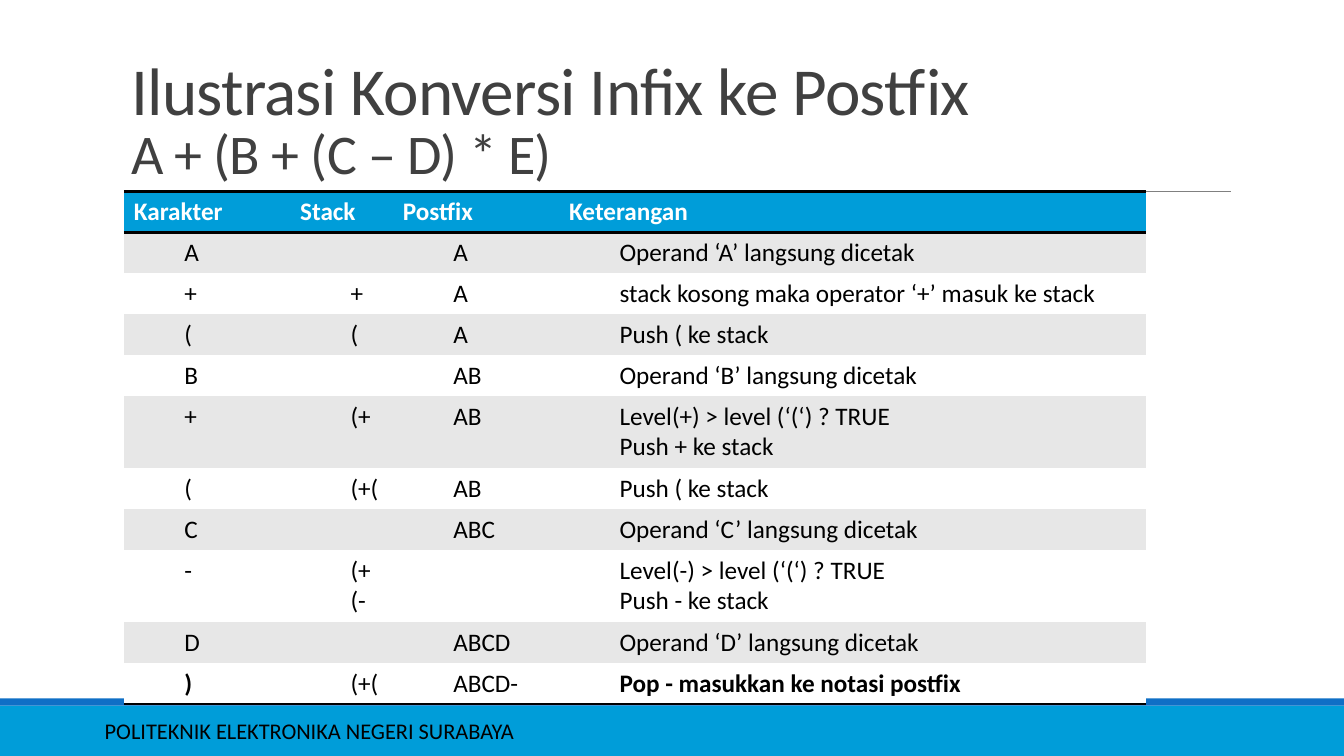
from dataclasses import dataclass

import pptx
import pptx.dml.color
import pptx.enum.shapes
import pptx.enum.text
import pptx.oxml
import pptx.oxml.ns
import pptx.util
from pptx.util import Cm

TITLE = [("Ilustrasi Konversi Infix ke Postfix", 48), ("A + (B + (C – D) * E)", 40)]
FOOTER = "POLITEKNIK ELEKTRONIKA NEGERI SURABAYA"
HEADINGS = ("Karakter", "Stack", "Postfix", "Keterangan")
STEPS = [
    ("A", "", "A", "Operand ‘A’ langsung dicetak"),
    ("+", "+", "A", "stack kosong maka operator ‘+’ masuk ke stack"),
    ("(", "(", "A", "Push ( ke stack"),
    ("B", "", "AB", "Operand ‘B’ langsung dicetak"),
    ("+", "(+", "AB", "Level(+) > level (‘(‘) ? TRUE\nPush + ke stack"),
    ("(", "(+(", "AB", "Push ( ke stack"),
    ("C", "", "ABC", "Operand ‘C’ langsung dicetak"),
    ("-", "(+(-", "", "Level(-) > level (‘(‘) ? TRUE\nPush - ke stack"),
    ("D", "", "ABCD", "Operand ‘D’ langsung dicetak"),
    (")", "(+(", "ABCD-", "Pop - masukkan ke notasi postfix"),
]
BOLD_CELLS = {(10, 0), (10, 3)}
COLUMN_WIDTHS = (4.19, 2.59, 4.19, 14.79)
ROW_HEIGHT, TALL_ROW_HEIGHT = 1.03, 1.82


@dataclass(frozen=True)
class Theme:
    font: str = "Calibri"
    accent: str = "009DD9"
    stripe: str = "0F6FC6"
    rule: str = "808080"
    title: str = "404040"
    ink: str = "000000"
    paper: str = "FFFFFF"
    band: str = "E7E7E7"
    footer_size: int = 16
    table_size: int = 18


THEME = Theme()


def rgb(color):
    return pptx.dml.color.RGBColor.from_string(color)


def write(paragraph, text, *, size, color=THEME.ink, bold=False, spacing=None, indent=None):
    if indent is not None:
        paragraph.level = 1
        properties = paragraph._p.get_or_add_pPr()
        properties.set("marL", str(indent))
        properties.set("indent", "0")
    run = paragraph.add_run()
    run.text = text
    run.font.name = THEME.font
    run.font.size = pptx.util.Pt(size)
    run.font.bold = bold
    run.font.color.rgb = rgb(color)
    if spacing is not None:
        run._r.get_or_add_rPr().set("spc", str(spacing))


def add_bar(slide, top, height, color):
    bar = slide.shapes.add_shape(
        pptx.enum.shapes.MSO_SHAPE.RECTANGLE, 0, Cm(top), Cm(33.87), Cm(height))
    bar.shadow.inherit = False
    bar.fill.solid()
    bar.fill.fore_color.rgb = rgb(color)
    bar.line.fill.background()


def add_border(cell, side):
    border = pptx.oxml.parse_xml(
        f'<a:{side} {pptx.oxml.ns.nsdecls("a")} w="25400"><a:solidFill>'
        f'<a:srgbClr val="{THEME.ink}"/></a:solidFill></a:{side}>')
    properties = cell._tc.get_or_add_tcPr()
    properties.insert(len(properties.findall(pptx.oxml.ns.qn("a:lnT"))), border)


def add_frame(slide):
    add_bar(slide, 17.78, 1.27, THEME.accent)
    add_bar(slide, 17.6, 0.18, THEME.stripe)
    rule = slide.shapes.add_connector(
        pptx.enum.shapes.MSO_CONNECTOR.STRAIGHT, Cm(3.33), Cm(4.83), Cm(31.01), Cm(4.83))
    rule.line.color.rgb = rgb(THEME.rule)
    rule.line.width = pptx.util.Pt(0.5)
    rule._element.spPr.append(
        pptx.oxml.parse_xml(f'<a:effectLst {pptx.oxml.ns.nsdecls("a")}/>'))
    footer = slide.shapes.add_textbox(Cm(2.39), Cm(17.91), Cm(21.36), Cm(1.02)).text_frame
    footer.word_wrap = True
    footer.vertical_anchor = pptx.enum.text.MSO_ANCHOR.MIDDLE
    write(footer.paragraphs[0], FOOTER, size=THEME.footer_size)


def add_title(slide):
    title = slide.shapes.title
    title.left, title.top, title.width, title.height = Cm(3.05), Cm(0.79), Cm(27.94), Cm(4.03)
    frame = title.text_frame
    frame.word_wrap = True
    frame.auto_size = pptx.enum.text.MSO_AUTO_SIZE.NONE
    frame.vertical_anchor = pptx.enum.text.MSO_ANCHOR.BOTTOM
    heading = frame.paragraphs[0]
    heading.alignment = pptx.enum.text.PP_ALIGN.LEFT
    heading.line_spacing = 0.85
    for number, (text, size) in enumerate(TITLE):
        if number:
            heading.add_line_break()
        write(heading, text, size=size, color=THEME.title, spacing=-50)


def add_steps(slide):
    rows = [HEADINGS, *STEPS]
    heights = [TALL_ROW_HEIGHT if "\n" in row[3] else ROW_HEIGHT for row in rows]
    steps = slide.shapes.add_table(
        len(rows), len(HEADINGS), Cm(3.12), Cm(4.83),
        Cm(sum(COLUMN_WIDTHS)), Cm(sum(heights))).table
    style = steps._tbl.tblPr.find(pptx.oxml.ns.qn("a:tableStyleId"))
    style.text = "{2D5ABB26-0587-4C30-8999-92F81FD0307C}"
    for column, width in zip(steps.columns, COLUMN_WIDTHS):
        column.width = Cm(width)
    for r, (row, height) in enumerate(zip(rows, heights)):
        steps.rows[r].height = Cm(height)
        header = r == 0
        fill = THEME.accent if header else THEME.band if r % 2 else THEME.paper
        for c, text in enumerate(row):
            cell = steps.cell(r, c)
            cell.fill.solid()
            cell.fill.fore_color.rgb = rgb(fill)
            if header:
                add_border(cell, "lnT")
            if header or r == len(STEPS):
                add_border(cell, "lnB")
            for number, line in enumerate(text.split("\n") if text else []):
                frame = cell.text_frame
                paragraph = frame.add_paragraph() if number else frame.paragraphs[0]
                write(paragraph, line, size=THEME.table_size,
                      color=THEME.paper if header else THEME.ink,
                      bold=header or (r, c) in BOLD_CELLS,
                      indent=None if header else Cm(1.27))


def main():
    deck = pptx.Presentation()
    deck.slide_width, deck.slide_height = Cm(33.87), Cm(19.05)
    slide = deck.slides.add_slide(deck.slide_layouts[5])
    add_frame(slide)
    add_title(slide)
    add_steps(slide)
    deck.save("out.pptx")


if __name__ == "__main__":
    main()
